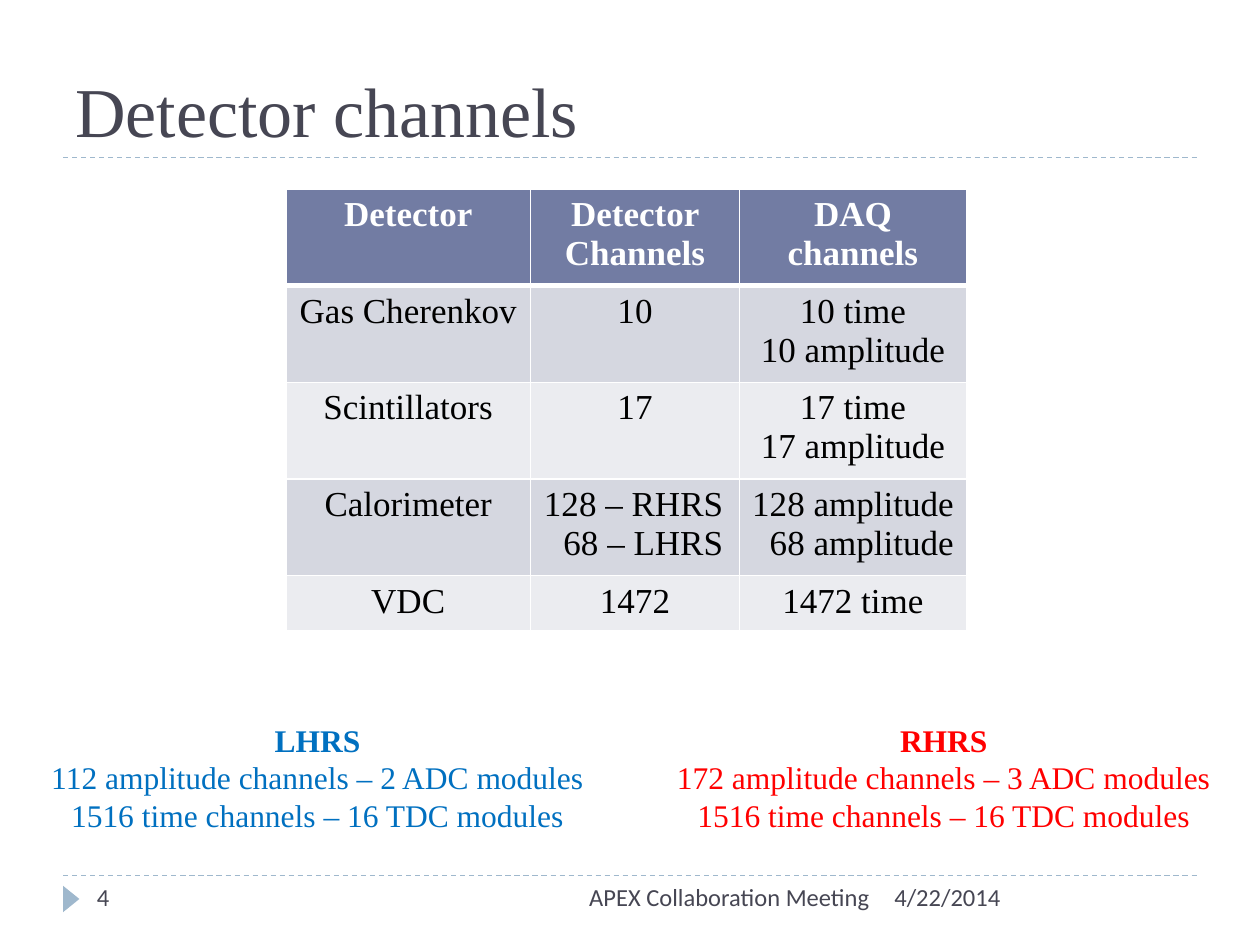
from lxml import etree
from pptx import Presentation
from pptx.dml.color import RGBColor
from pptx.enum import dml, shapes, text
from pptx.oxml.ns import qn
from pptx.util import Inches, Pt

COLORS = {
    "ink": "464653", "accent": "9FB8CD", "header": "727CA3",
    "band_dark": "D5D7E0", "band_light": "EBECF0",
    "white": "FFFFFF", "black": "000000", "left_arm": "0070C0", "right_arm": "FF0000",
}
SERIF, SANS = "Times New Roman", "Calibri"
LEFT, CENTER, RIGHT = text.PP_ALIGN.LEFT, text.PP_ALIGN.CENTER, text.PP_ALIGN.RIGHT

DETECTORS = [
    ["Detector", "Detector Channels", "DAQ channels"],
    ["Gas Cherenkov", "10", "10 time\n10 amplitude"],
    ["Scintillators", "17", "17 time\n17 amplitude"],
    ["Calorimeter", "128 – RHRS\n68 – LHRS", "128 amplitude\n68 amplitude"],
    ["VDC", "1472", "1472 time"],
]
CALORIMETER_ROW = 3
COLUMN_WIDTHS = [1.94, 1.66, 1.8]
ROW_HEIGHT = 0.41


def rgb(name):
    return RGBColor.from_string(COLORS[name])


def write(frame, content, size, color, font=SERIF, align=LEFT, bold_lines=0):
    """Fill a text frame, one paragraph a line; the first bold_lines are bold."""
    for index, line in enumerate(content.split("\n")):
        paragraph = frame.paragraphs[0] if index == 0 else frame.add_paragraph()
        paragraph.alignment = align
        run = paragraph.add_run()
        run.text = line
        run.font.name = font
        run.font.size = Pt(size)
        run.font.bold = index < bold_lines
        run.font.color.rgb = rgb(color)


def add_text(slide, content, box, anchor=text.MSO_ANCHOR.TOP, wrap=True, **style):
    frame = slide.shapes.add_textbox(*map(Inches, box)).text_frame
    frame.word_wrap = wrap
    frame.vertical_anchor = anchor
    write(frame, content, **style)


def add_divider(slide, y):
    divider = slide.shapes.add_connector(
        shapes.MSO_CONNECTOR.STRAIGHT, Inches(0.5), Inches(y), Inches(9.5), Inches(y))
    divider.line.color.rgb = rgb("accent")
    divider.line.width = Pt(0.75)
    divider.line.dash_style = dml.MSO_LINE.DASH
    etree.SubElement(divider._element.spPr, qn("a:effectLst"))


def add_page_marker(slide):
    marker = slide.shapes.add_shape(
        shapes.MSO_SHAPE.ISOSCELES_TRIANGLE,
        Inches(0.46), Inches(7.07), Inches(0.21), Inches(0.13))
    marker.rotation = 90
    marker.shadow.inherit = False
    marker.fill.solid()
    marker.fill.fore_color.rgb = rgb("accent")
    marker.line.fill.background()


def set_borders(cell, bottom):
    """Draw white cell borders; they must precede the fill in the cell XML."""
    properties = cell._tc.get_or_add_tcPr()
    for side, width in {"L": 1, "R": 1, "T": 1, "B": bottom}.items():
        border = etree.SubElement(properties, qn(f"a:ln{side}"), w=str(Pt(width)))
        fill = etree.SubElement(border, qn("a:solidFill"))
        etree.SubElement(fill, qn("a:srgbClr"), val=COLORS["white"])


def add_detector_table(slide):
    table = slide.shapes.add_table(
        len(DETECTORS), len(COLUMN_WIDTHS), Inches(2.27), Inches(1.5),
        Inches(sum(COLUMN_WIDTHS)), Inches(ROW_HEIGHT * len(DETECTORS))).table
    for column, width in zip(table.columns, COLUMN_WIDTHS):
        column.width = Inches(width)
    for r, values in enumerate(DETECTORS):
        header = r == 0
        band = "header" if header else "band_dark" if r % 2 else "band_light"
        # Two-arm counts line up on their right edge.
        for c, value in enumerate(values):
            cell = table.cell(r, c)
            set_borders(cell, bottom=3 if header else 1)
            cell.fill.solid()
            cell.fill.fore_color.rgb = rgb(band)
            write(cell.text_frame, value, size=20,
                  color="white" if header else "black",
                  align=RIGHT if r == CALORIMETER_ROW and c else CENTER,
                  bold_lines=1 if header else 0)
    table.cell(CALORIMETER_ROW, 1).margin_right = Inches(0.13)


def main():
    deck = Presentation()
    deck.slide_width, deck.slide_height = Inches(10), Inches(7.5)
    slide = deck.slides.add_slide(deck.slide_layouts[6])

    for y in (6.95, 1.25):
        add_divider(slide, y)
    add_page_marker(slide)
    add_text(slide, "Detector channels", (0.5, 0.17, 9, 1.08),
             anchor=text.MSO_ANCHOR.BOTTOM, size=40, color="ink")

    footer = {"size": 14, "color": "ink", "font": SANS}
    add_text(slide, "4", (0.67, 6.95, 2.17, 0.4), **footer)
    add_text(slide, "4/22/2014", (7, 6.95, 2.5, 0.4), **footer)
    add_text(slide, "APEX Collaboration Meeting", (3.17, 6.95, 3.83, 0.4),
             align=RIGHT, **footer)

    add_detector_table(slide)

    summary = {"size": 18, "align": CENTER, "bold_lines": 1}
    time_line = "1516 time channels – 16 TDC modules"
    add_text(slide, f"RHRS\n172 amplitude channels – 3 ADC modules\n{time_line}",
             (5.25, 5.67, 4.48, 1.01), wrap=False, color="right_arm", **summary)
    add_text(slide, f"LHRS\n112 amplitude channels – 2 ADC modules\n{time_line}",
             (0.27, 5.67, 4.5, 1.01), color="left_arm", **summary)

    deck.save("out.pptx")


if __name__ == "__main__":
    main()
